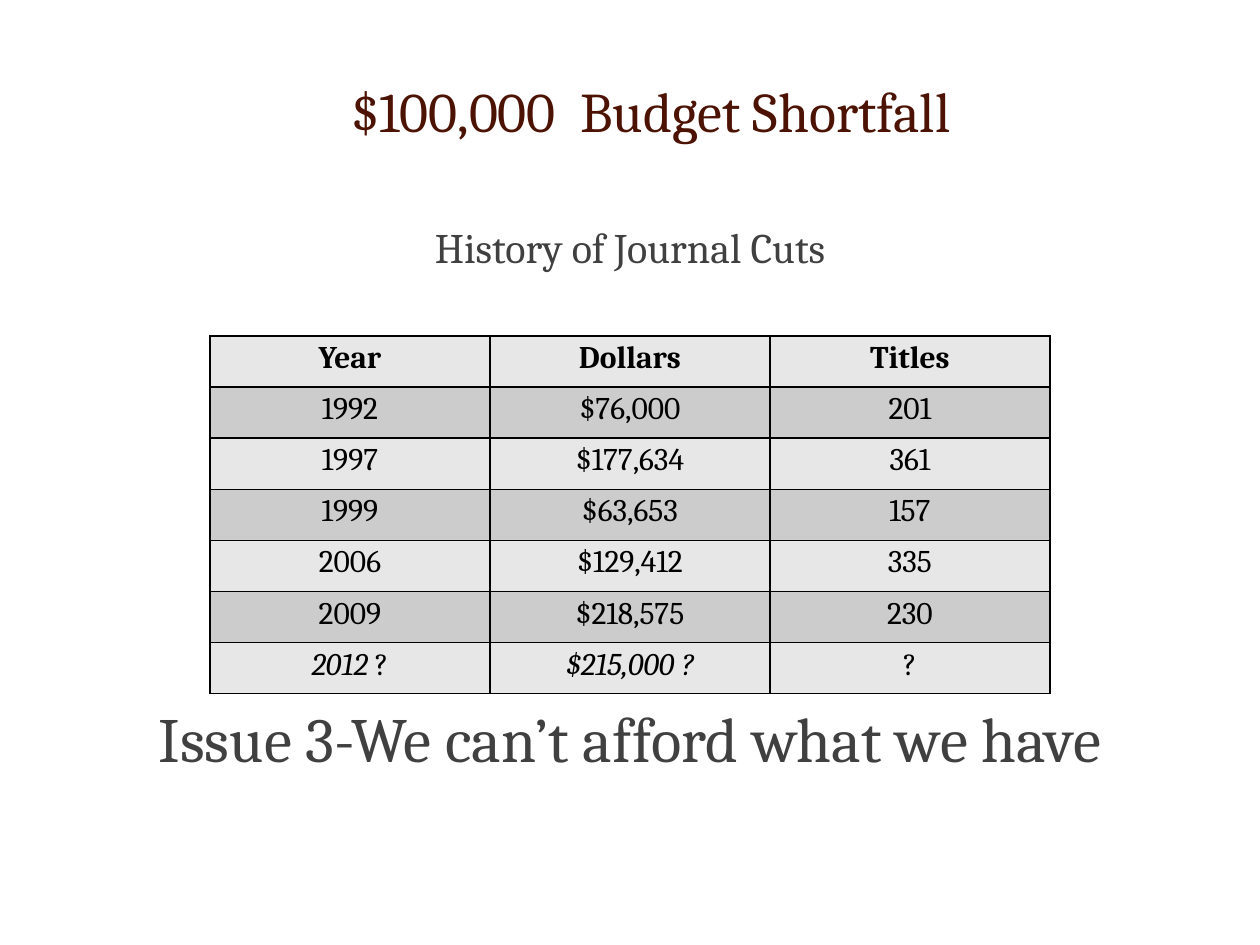
from lxml import etree
from pptx import Presentation
from pptx.dml.color import RGBColor
from pptx.enum.text import MSO_ANCHOR, PP_ALIGN
from pptx.oxml.ns import qn
from pptx.util import Pt

CENTER = PP_ALIGN.CENTER
MIDDLE = MSO_ANCHOR.MIDDLE

COLORS = {
    "title": "4C1304",
    "body": "404040",
    "cell": "000000",
    "border": "000000",
    "light": "E7E7E7",
    "dark": "CCCCCC",
}

HEADINGS = ["Year", "Dollars", "Titles"]
# A cell is plain text or a list of (text, italic) runs
JOURNAL_CUTS = [
    ["1992", "$76,000", "201"],
    ["1997", "$177,634", "361"],
    ["1999", "$63,653", "157"],
    ["2006", "$129,412", "335"],
    ["2009", "$218,575", "230"],
    [[("2012", True), (" ?", False)], [("$215,000 ?", True)], "?"],
]


class SlideBuilder:
    font_name = "Cambria"
    border_width = Pt(1)

    def __init__(self, slide):
        self.slide = slide

    def add_runs(self, text_frame, runs, color, **formats):
        paragraph = text_frame.paragraphs[0]
        paragraph.alignment = CENTER
        for text, italic in runs:
            run = paragraph.add_run()
            run.text = text
            values = {"name": self.font_name, "italic": italic, **formats}
            for name, value in values.items():
                setattr(run.font, name, value)
            run.font.color.rgb = RGBColor.from_string(COLORS[color])

    def text(self, text, left, top, width, height, size, color):
        box = self.slide.shapes.add_textbox(Pt(left), Pt(top), Pt(width), Pt(height))
        frame = box.text_frame
        frame.word_wrap = True
        frame.vertical_anchor = MIDDLE
        self.add_runs(frame, [(text, False)], color, size=Pt(size))

    def border(self, cell):
        properties = cell._tc.get_or_add_tcPr()
        for position, side in enumerate(("a:lnL", "a:lnR", "a:lnT", "a:lnB")):
            line = etree.Element(qn(side), w=str(self.border_width))
            fill = etree.SubElement(line, qn("a:solidFill"))
            etree.SubElement(fill, qn("a:srgbClr"), val=COLORS["border"])
            properties.insert(position, line)

    def table(self, rows, left, top, column_width, row_height, size):
        columns = len(rows[0])
        table = self.slide.shapes.add_table(
            len(rows), columns, Pt(left), Pt(top),
            Pt(column_width * columns), Pt(row_height * len(rows))).table
        for row in table.rows:
            row.height = Pt(row_height)
        for row_index, row in enumerate(rows):
            for column_index, content in enumerate(row):
                cell = table.cell(row_index, column_index)
                cell_format = {"vertical_anchor": MIDDLE, "margin_top": 0,
                               "margin_bottom": Pt(3.6)}
                for name, value in cell_format.items():
                    setattr(cell, name, value)
                cell.fill.solid()
                band = "dark" if row_index % 2 else "light"
                cell.fill.fore_color.rgb = RGBColor.from_string(COLORS[band])
                runs = [(content, False)] if isinstance(content, str) else content
                self.add_runs(cell.text_frame, runs, "cell",
                              size=Pt(size), bold=row_index == 0)
                self.border(cell)


def main():
    presentation = Presentation()
    presentation.slide_width = Pt(720)
    presentation.slide_height = Pt(540)
    slide = presentation.slides.add_slide(presentation.slide_layouts[6])
    builder = SlideBuilder(slide)

    # Table of cuts by year
    builder.table([HEADINGS] + JOURNAL_CUTS, 120, 192, 160, 29.2, 18)

    # Title, table heading and closing statement
    builder.text("$100,000  Budget Shortfall", 48, 18, 648, 90, 32, "title")
    builder.text("History of Journal Cuts", 36, 121, 648, 40, 24, "body")
    builder.text("Issue 3-We can’t afford what we have", 36, 391, 648, 60, 36, "body")

    presentation.save("out.pptx")


if __name__ == "__main__":
    main()
